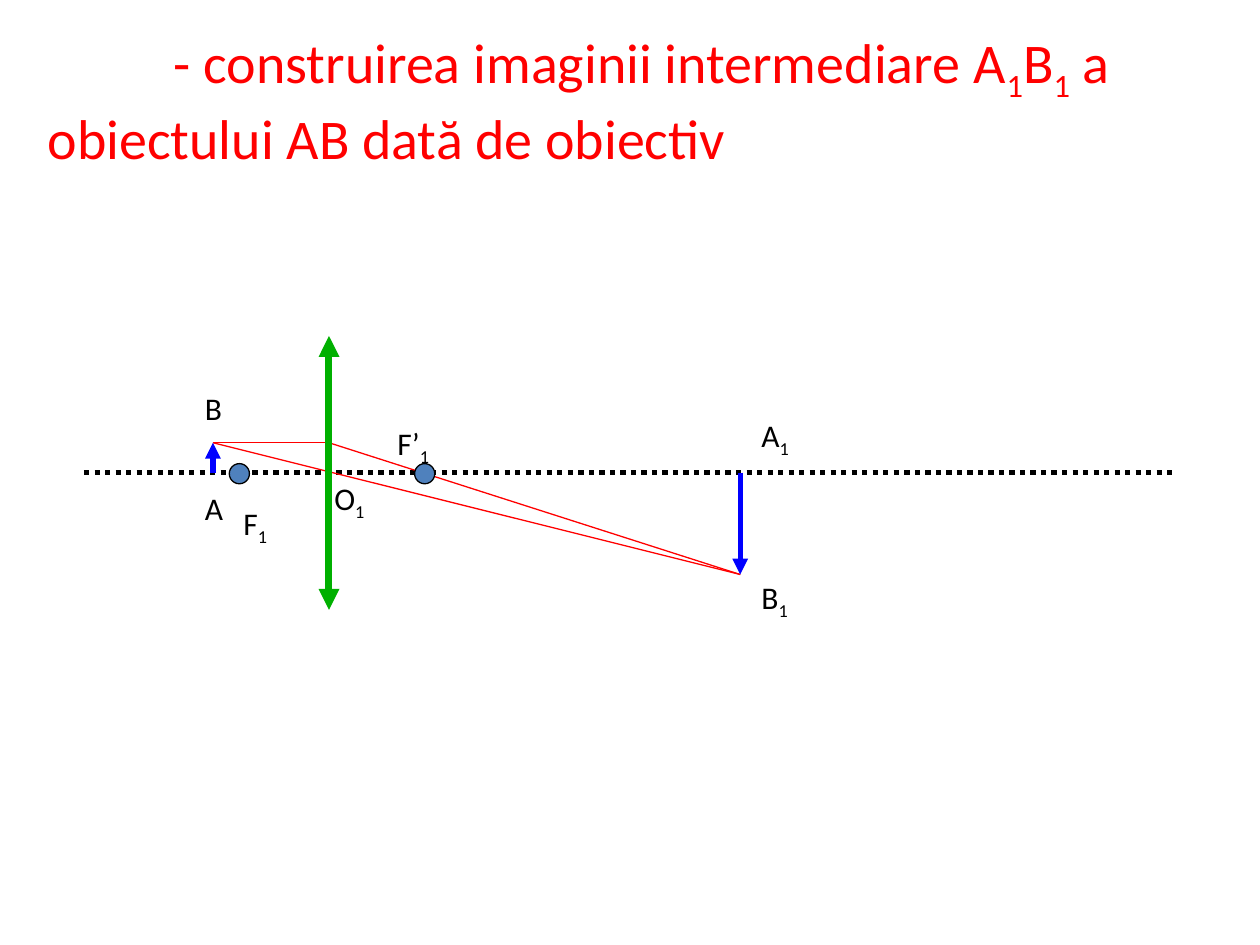
from dataclasses import dataclass

from lxml import etree
from pptx import Presentation
from pptx.dml.color import RGBColor
from pptx.enum.dml import MSO_LINE
from pptx.enum.shapes import MSO_CONNECTOR, MSO_SHAPE
from pptx.enum.text import MSO_ANCHOR, MSO_AUTO_SIZE, PP_ALIGN
from pptx.oxml.ns import qn
from pptx.util import Pt

DOTS = MSO_LINE.ROUND_DOT
STRAIGHT = MSO_CONNECTOR.STRAIGHT
OVAL = MSO_SHAPE.OVAL
TOP = MSO_ANCHOR.TOP
LEFT = PP_ALIGN.LEFT
FIXED = MSO_AUTO_SIZE.NONE


@dataclass(frozen=True)
class Theme:
    font: str = "Calibri"
    title: int = 32
    label: int = 18
    black: str = "000000"
    red: str = "FF0000"
    blue: str = "0000FF"
    green: str = "00B000"
    focus: str = "4F81BD"
    thin: float = 0.75
    bold: float = 3
    lens: float = 4


THEME = Theme()

# Optical layout, in points
AXIS = 270
LENS = 188
OBJ, OBJ_TOP = 121.7, 253
IMG, IMG_END = 423, 328.3
DOT = 11.5


def color(code):
    return RGBColor.from_string(code)


def write(frame, text, size, code):
    """Fill the frame; a digit after an underscore becomes a subscript."""
    for name, value in {"word_wrap": True, "auto_size": FIXED,
                        "vertical_anchor": TOP}.items():
        setattr(frame, name, value)
    para = frame.paragraphs[0]
    para.alignment = LEFT
    first, *rest = text.split("_")
    parts = [(first, False)]
    for part in rest:
        parts += [(part[0], True), (part[1:], False)]
    for words, sub in parts:
        if not words:
            continue
        run = para.add_run()
        run.text = words
        for name, value in {"name": THEME.font, "size": Pt(size)}.items():
            setattr(run.font, name, value)
        run.font.color.rgb = color(code)
        if sub:
            run._r.get_or_add_rPr().set("baseline", "-25000")
    return para


def add_title(slide, text):
    title = slide.shapes.title
    box = {"left": 20, "top": 12, "width": 675, "height": 85}
    for name, value in box.items():
        setattr(title, name, Pt(value))
    para = write(title.text_frame, text, THEME.title, THEME.red)
    para._p.get_or_add_pPr().set("indent", str(Pt(72)))


def add_label(slide, text, x, y, width):
    box = slide.shapes.add_textbox(Pt(x), Pt(y), Pt(width), Pt(29))
    write(box.text_frame, text, THEME.label, THEME.black)


def add_line(slide, start, end, code, width, dash=None, tips=()):
    """Draw a line; tips holds headEnd for the start, tailEnd for the end."""
    ends = [Pt(n) for n in (*start, *end)]
    item = slide.shapes.add_connector(STRAIGHT, *ends)
    item.line.color.rgb = color(code)
    item.line.width = Pt(width)
    if dash:
        item.line.dash_style = dash
    line = item.line._get_or_add_ln()
    for tip in tips:
        etree.SubElement(line, qn(f"a:{tip}"), type="triangle")
    etree.SubElement(item._element.spPr, qn("a:effectLst"))


def add_focus(slide, x):
    dot = slide.shapes.add_shape(
        OVAL, Pt(x - DOT / 2), Pt(AXIS + 0.7 - DOT / 2), Pt(DOT), Pt(DOT))
    dot.shadow.inherit = False
    dot.fill.solid()
    dot.fill.fore_color.rgb = color(THEME.focus)
    dot.line.color.rgb = color(THEME.black)
    dot.line.width = Pt(THEME.thin)


def main():
    deck = Presentation()
    deck.slide_width, deck.slide_height = Pt(720), Pt(540)
    slide = deck.slides.add_slide(deck.slide_layouts[5])
    add_title(slide, "- construirea imaginii intermediare A_1B_1 a "
                     "obiectului AB dată de obiectiv")

    add_line(slide, (48, AXIS), (672, AXIS), THEME.black, THEME.bold, DOTS)
    tip, bend, meet = (OBJ, OBJ_TOP), (LENS, OBJ_TOP), (IMG, IMG_END)
    for start, end in ((tip, bend), (bend, meet), (tip, meet)):
        add_line(slide, start, end, THEME.red, THEME.thin)
    add_line(slide, (OBJ, AXIS), tip, THEME.blue, THEME.bold,
             tips=("tailEnd",))
    add_line(slide, (LENS, 192), (LENS, 348.5), THEME.green, THEME.lens,
             tips=("headEnd", "tailEnd"))
    for x in (136.8, 242.7):
        add_focus(slide, x)
    add_line(slide, (IMG, AXIS), meet, THEME.blue, THEME.bold,
             tips=("tailEnd",))

    for text, x, y, width in (
        ("A", 110, 276, 28),
        ("B", 110, 218.5, 28),
        ("O_1", 184, 270, 40),
        ("F_1", 132, 284.5, 40),
        ("F’_1", 220, 239, 40),
        ("A_1", 428, 234, 40),
        ("B_1", 428, 327, 40),
    ):
        add_label(slide, text, x, y, width)
    deck.save("out.pptx")


if __name__ == "__main__":
    main()
